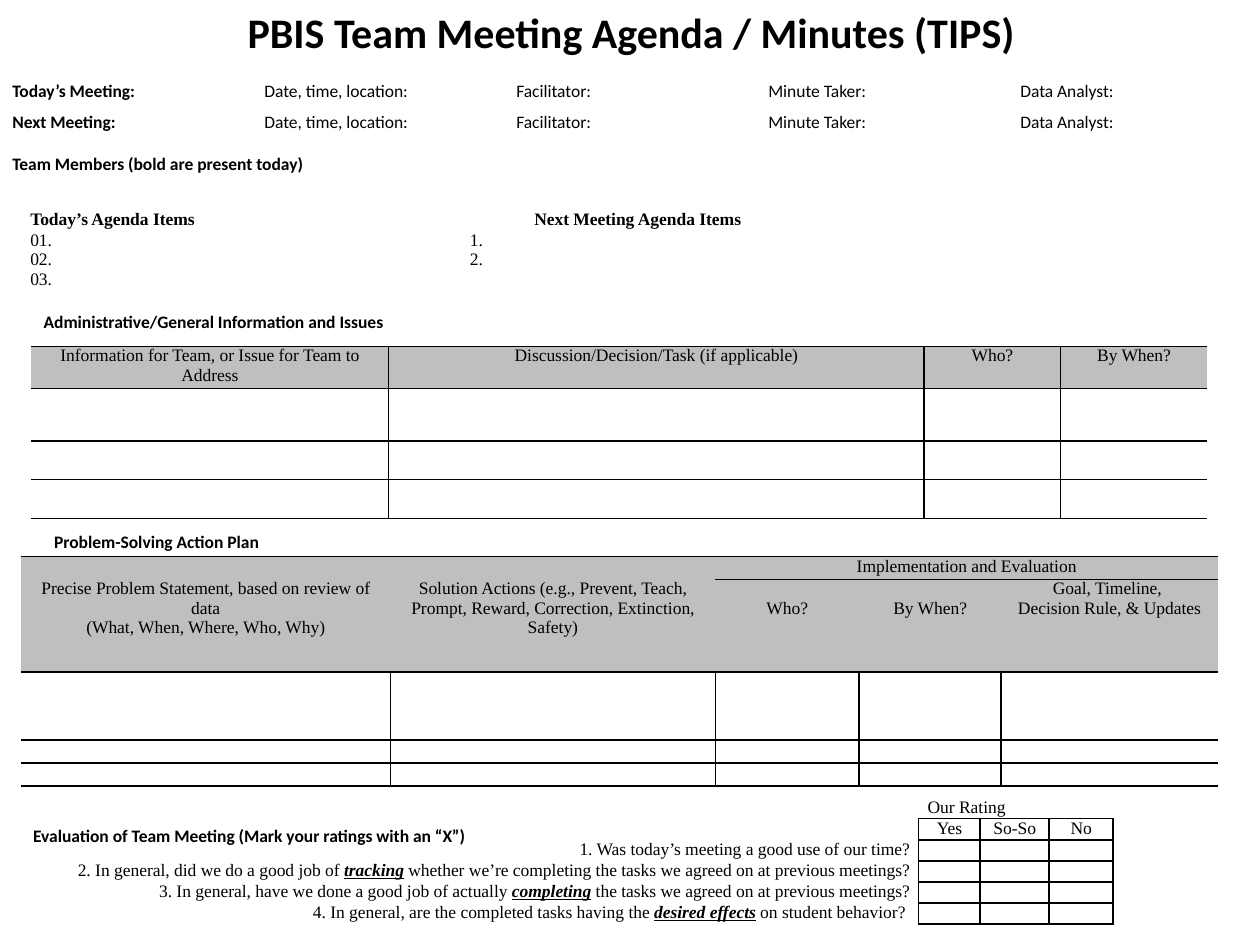
from lxml import etree
from pptx import Presentation
from pptx import util as u
from pptx.dml import color
from pptx.enum import text
from pptx.oxml import ns

Cm, Pt = u.Cm, u.Pt
hue = color.RGBColor.from_string
BLACK, GREY, WHITE = "000000", "BFBFBF", "FFFFFF"
LEFT, MID, RIGHT = text.PP_ALIGN.LEFT, text.PP_ALIGN.CENTER, text.PP_ALIGN.RIGHT
PLAIN = "{2D5ABB26-0587-4C30-8999-92F81FD0307C}"  # no style, no grid


def grid(x, y, cols, rows, words, align):
    """Add a plain table; words maps (row, column) to cell text."""
    frame = slide.shapes.add_table(len(rows), len(cols), Cm(x), Cm(y),
                                   Cm(sum(cols)), Cm(sum(rows)))
    table = frame.table
    table.first_row = table.horz_banding = False
    table._tbl.tblPr.find(ns.qn("a:tableStyleId")).text = PLAIN
    for col, width in zip(table.columns, cols):
        col.width = Cm(width)
    for r, height in enumerate(rows):
        table.rows[r].height = Cm(height)
        for c in range(len(cols)):
            cell = table.cell(r, c)
            cell.margin_left = cell.margin_right = Cm(0.18)
            cell.margin_top = cell.margin_bottom = 0
            cell.text = words.get((r, c), "")
            for para in cell.text_frame.paragraphs:
                para.alignment = align
                para.font.size, para.font.name = Pt(10), "Times New Roman"
                para.font.color.rgb = hue(BLACK)
                if not para.runs:
                    etree.SubElement(para._p, ns.qn("a:endParaRPr"), sz="1000")
    return table


def edge(cell, sides, fill=None):
    """Rule the given sides (of L, R, T, B), then fill the cell."""
    props = cell._tc.get_or_add_tcPr()
    for side in "LRTB":
        if side in sides:
            line = etree.SubElement(props, ns.qn("a:ln" + side), w=str(Pt(1)))
            solid = etree.SubElement(line, ns.qn("a:solidFill"))
            etree.SubElement(solid, ns.qn("a:srgbClr"), val=BLACK)
    if fill:
        cell.fill.solid()
        cell.fill.fore_color.rgb = hue(fill)


deck = Presentation()
deck.slide_width, deck.slide_height = Cm(25.4), Cm(19.05)
slide = deck.slides.add_slide(deck.slide_layouts[5])

# Title
title = slide.shapes.title
title.left, title.top, title.width, title.height = Cm(4.66), 0, Cm(16.13), Cm(1.27)
title.text_frame.text = "PBIS Team Meeting Agenda / Minutes (TIPS)"
title.text_frame.vertical_anchor = text.MSO_ANCHOR.MIDDLE
para = title.text_frame.paragraphs[0]
para.alignment = MID
para.font.size, para.font.name, para.font.bold = Pt(24), "Calibri", True
para.font.color.rgb = hue(BLACK)

# Meeting lines and section labels: bold lead, then plain tabbed fields
fields = "\tDate, time, location:\tFacilitator:\tMinute Taker:\tData Analyst:"
tabbed = []
for x, y, width, lead, rest in [
    (0, 1.48, 25.4, "Today’s Meeting:", fields),
    (0, 2.11, 25.4, "Next Meeting:", fields),
    (0, 2.96, 9.95, "Team Members (bold are present today)", ""),
    (0.63, 6.15, 9.1, "Administrative/General Information and Issues", ""),
    (0.84, 10.58, 9.1, "Problem-Solving Action Plan", ""),
    (0.42, 16.51, 11, "Evaluation of Team Meeting (Mark your ratings with an “X”)", ""),
]:
    frame = slide.shapes.add_textbox(Cm(x), Cm(y), Cm(width), Cm(0.68)).text_frame
    frame.word_wrap = True
    frame.vertical_anchor = text.MSO_ANCHOR.MIDDLE
    para = frame.paragraphs[0]
    para.font.size, para.font.name = Pt(10), "Calibri"
    para.font.color.rgb = hue(BLACK)
    run = para.add_run()
    run.text, run.font.bold = lead, True
    if rest:
        para.add_run().text = rest
        tabbed.append((para, [5.08 * k for k in range(1, 5)]))

# Agenda items; the right-hand list is numbered and waits for entries
agenda = grid(0.43, 4.23, [8.05, 0.81, 8.08], [0.42, 1.28], {
    (0, 0): "Today’s Agenda Items\tNext Meeting Agenda Items",
    (1, 0): "01.\n02.\n03.",
    (1, 2): " \n ",
}, LEFT)
agenda.cell(0, 0).merge(agenda.cell(0, 2))
para = agenda.cell(0, 0).text_frame.paragraphs[0]
para.font.bold = True
tabbed.append((para, [10.16]))
for para in agenda.cell(1, 2).text_frame.paragraphs:
    props = para._p.get_or_add_pPr()
    props.set("marL", str(Cm(0.64)))
    props.set("indent", str(-Cm(0.64)))
    props.insert(0, etree.Element(ns.qn("a:buAutoNum"), type="arabicPeriod"))

# Tab stops
for para, stops in tabbed:
    tabs = etree.Element(ns.qn("a:tabLst"))
    for stop in stops:
        etree.SubElement(tabs, ns.qn("a:tab"), pos=str(Cm(stop)), algn="l")
    para._p.get_or_add_pPr().insert(0, tabs)

# General issues and action plan tables
issues = grid(0.63, 6.98, [7.2, 10.8, 2.75, 2.96], [0.84, 1.06, 0.78, 0.78], {
    (0, 0): "Information for Team, or Issue for Team to Address",
    (0, 1): "Discussion/Decision/Task (if applicable)",
    (0, 2): "Who?",
    (0, 3): "By When?",
}, MID)
plan = grid(0.42, 11.22, [7.45, 6.55, 2.9, 2.86, 4.37],
            [0.46, 1.87, 1.37, 0.46, 0.46], {
    (0, 2): "Implementation and Evaluation",
    (1, 0): "Precise Problem Statement, based on review of data\n"
            "(What, When, Where, Who, Why)",
    (1, 1): "Solution Actions (e.g., Prevent, Teach, Prompt, Reward, "
            "Correction, Extinction, Safety)",
    (1, 2): "Who?",
    (1, 3): "By When?",
    (1, 4): "Goal, Timeline, \nDecision Rule, & Updates",
}, MID)
plan.cell(0, 2).merge(plan.cell(0, 4))
for c in (2, 3):
    plan.cell(1, c).margin_top = Cm(0.39)

for table, heads in (issues, 1), (plan, 2):
    last = len(table.columns) - 1
    for r in range(len(table.rows)):
        for c in range(last + 1):
            sides = "TB" + "L" * (c > 0) + "R" * (c < last)
            if table is plan and r < heads:
                sides = "TB" if c > 1 else "TB"[r]
            edge(table.cell(r, c), sides, GREY if r < heads else WHITE)

# Meeting evaluation; stars enclose the stressed words
asks = [
    "1. Was today’s meeting a good use of our time?",
    "2. In general, did we do a good job of *tracking* whether we’re "
    "completing the tasks we agreed on at previous meetings?",
    "3. In general, have we done a good job of actually *completing* "
    "the tasks we agreed on at previous meetings?",
    "4. In general, are the completed tasks having the *desired effects* "
    "on student behavior? ",
]
rating = grid(1.06, 16.08, [17.46, 1.24, 1.39, 1.29], [0.42] * 6, {
    (0, 1): "Our Rating", (1, 1): "Yes", (1, 2): "So-So", (1, 3): "No",
}, MID)
rating.cell(0, 1).merge(rating.cell(0, 3))
rating.cell(0, 1).text_frame.paragraphs[0].alignment = LEFT
for r in range(1, 6):
    edge(rating.cell(r, 0), "R")
    for c in range(1, 4):
        edge(rating.cell(r, c), "LRTB")
for r, ask in enumerate(asks, 2):
    para = rating.cell(r, 0).text_frame.paragraphs[0]
    para.alignment = RIGHT
    for k, part in enumerate(ask.split("*")):
        run = para.add_run()
        run.text = part
        if k == 1:
            run.font.bold = run.font.italic = run.font.underline = True

deck.save("out.pptx")
